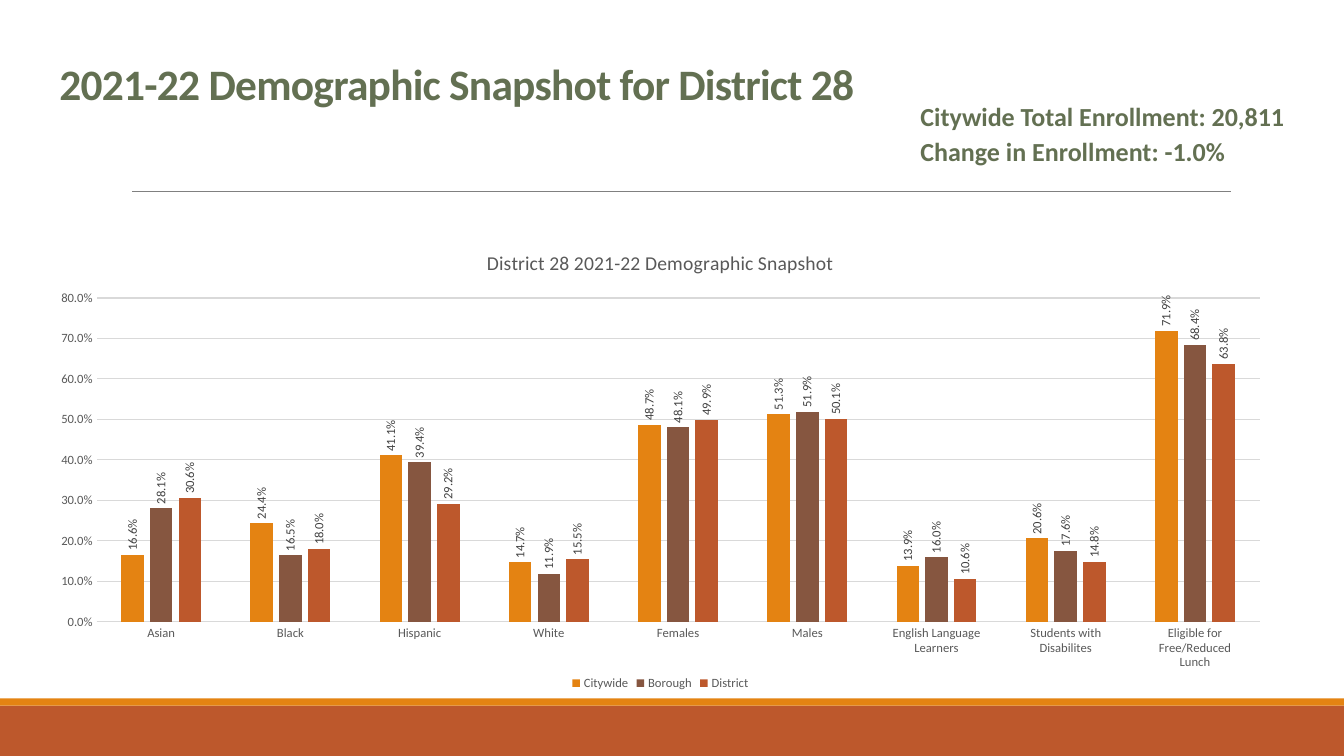
from lxml import etree
from pptx import Presentation
from pptx import util as u
from pptx.chart.data import CategoryChartData
from pptx.dml.color import RGBColor
from pptx.enum import chart as charts, shapes, text
from pptx.oxml.ns import qn

ORANGE, BROWN, RUST = "E48312", "865640", "BD582C"
GREEN, GREY, DARK, PALE = "637052", "595959", "404040", "D9D9D9"
PERCENT = "0.0%"

CATEGORIES = ["Asian", "Black", "Hispanic", "White", "Females", "Males",
              "English Language Learners", "Students with Disabilites",
              "Eligible for Free/Reduced Lunch"]
SERIES = [
    ("Citywide", ORANGE, [0.166, 0.244, 0.411, 0.147, 0.487, 0.513, 0.139, 0.206, 0.719]),
    ("Borough", BROWN, [0.281, 0.165, 0.394, 0.119, 0.481, 0.519, 0.16, 0.176, 0.684]),
    ("District", RUST, [0.306, 0.18, 0.292, 0.155, 0.499, 0.501, 0.106, 0.148, 0.638]),
]


def color(value):
    return RGBColor.from_string(value)


def inches(*lengths):
    return [u.Inches(length) for length in lengths]


class SlideBuilder:
    def __init__(self, slide, font_name="Calibri"):
        self.slide = slide
        self.font_name = font_name

    def style(self, font, size, ink, bold=False):
        font.name = self.font_name
        font.size = u.Pt(size)
        font.bold = bold
        font.color.rgb = color(ink)

    def band(self, top, height, fill):
        """Draw a full-width strip."""
        shape = self.slide.shapes.add_shape(
            shapes.MSO_SHAPE.RECTANGLE, *inches(0, top, 13.33, height))
        shape.shadow.inherit = False
        shape.fill.solid()
        shape.fill.fore_color.rgb = color(fill)
        shape.line.fill.background()

    def rule(self, left, right, top, ink):
        """Draw a thin horizontal line."""
        line = self.slide.shapes.add_connector(
            shapes.MSO_CONNECTOR.STRAIGHT, *inches(left, top, right, top))
        line.line.color.rgb = color(ink)
        line.line.width = u.Pt(0.5)
        etree.SubElement(line._element.spPr, qn("a:effectLst"))

    def text(self, box, lines, size, spacing, anchor, before=0, after=0, tracking=0):
        frame = self.slide.shapes.add_textbox(*inches(*box)).text_frame
        frame.word_wrap = True
        frame.vertical_anchor = anchor
        frame.text = "\n".join(lines)
        for index, paragraph in enumerate(frame.paragraphs):
            paragraph.line_spacing = spacing
            paragraph.space_before = u.Pt(before if index else 0)
            paragraph.space_after = u.Pt(after)
            for run in paragraph.runs:
                self.style(run.font, size, GREEN, bold=True)
                if tracking:
                    run._r.get_or_add_rPr().set("spc", str(int(tracking * 100)))

    def column_chart(self, box, title, categories, series):
        data = CategoryChartData(number_format=PERCENT)
        data.categories = categories
        for name, _, values in series:
            data.add_series(name, values)
        chart = self.slide.shapes.add_chart(
            charts.XL_CHART_TYPE.COLUMN_CLUSTERED, *inches(*box), data).chart
        self.style(chart.font, 10, "000000")
        self.chart_title(chart, title)
        self.axes(chart)
        chart.has_legend = True
        chart.legend.position = charts.XL_LEGEND_POSITION.BOTTOM
        chart.legend.include_in_layout = False
        self.style(chart.legend.font, 9, GREY)
        plot = chart.plots[0]
        plot.vary_by_categories = False
        plot.gap_width = 219
        plot.overlap = -27
        for columns, (_, fill, _) in zip(plot.series, series):
            columns.format.fill.solid()
            columns.format.fill.fore_color.rgb = color(fill)
            columns.invert_if_negative = False
            self.upright_labels(columns.data_labels)

    def chart_title(self, chart, title):
        chart.has_title = True
        chart.chart_title.include_in_layout = False
        frame = chart.chart_title.text_frame
        frame.text = title
        self.style(frame.paragraphs[0].runs[0].font, 14, GREY)

    def axes(self, chart):
        for axis in (chart.category_axis, chart.value_axis):
            axis.major_tick_mark = axis.minor_tick_mark = charts.XL_TICK_MARK.NONE
            self.style(axis.tick_labels.font, 9, GREY)
        value_axis = chart.value_axis
        value_axis.minimum_scale, value_axis.maximum_scale = 0, 0.8
        value_axis.major_unit = 0.1
        value_axis.tick_labels.number_format = PERCENT
        value_axis.tick_labels.number_format_is_linked = False
        value_axis.format.line.fill.background()
        for line in (chart.category_axis.format.line, value_axis.major_gridlines.format.line):
            line.color.rgb = color(PALE)
            line.width = u.Pt(0.75)

    def upright_labels(self, labels):
        """Show values above the columns, turned to read upwards."""
        labels.show_value = True
        labels.position = charts.XL_LABEL_POSITION.OUTSIDE_END
        labels.number_format = PERCENT
        labels.number_format_is_linked = False
        self.style(labels.font, 9, DARK)
        body = labels._element.find(qn("c:txPr")).find(qn("a:bodyPr"))
        body.set("rot", "-5400000")
        body.set("vert", "horz")


def main():
    presentation = Presentation()
    presentation.slide_width, presentation.slide_height = inches(13.33, 7.5)
    builder = SlideBuilder(presentation.slides.add_slide(presentation.slide_layouts[6]))
    builder.band(7, 0.5, RUST)
    builder.band(6.93, 0.07, ORANGE)
    builder.rule(1.31, 12.21, 1.9, "808080")
    builder.text((0.49, 0.55, 10.55, 0.61), ["2021-22 Demographic Snapshot for District 28"],
                 31, 0.9, text.MSO_ANCHOR.MIDDLE, tracking=-0.5)
    builder.text((9.03, 1.03, 4.02, 0.85),
                 ["Citywide Total Enrollment: 20,811", "Change in Enrollment: -1.0%"],
                 18.6, 0.7, text.MSO_ANCHOR.TOP, before=3.7, after=6)
    builder.column_chart((0.36, 2.29, 12.38, 4.6),
                         "District 28 2021-22 Demographic Snapshot", CATEGORIES, SERIES)
    presentation.save("out.pptx")


if __name__ == "__main__":
    main()
